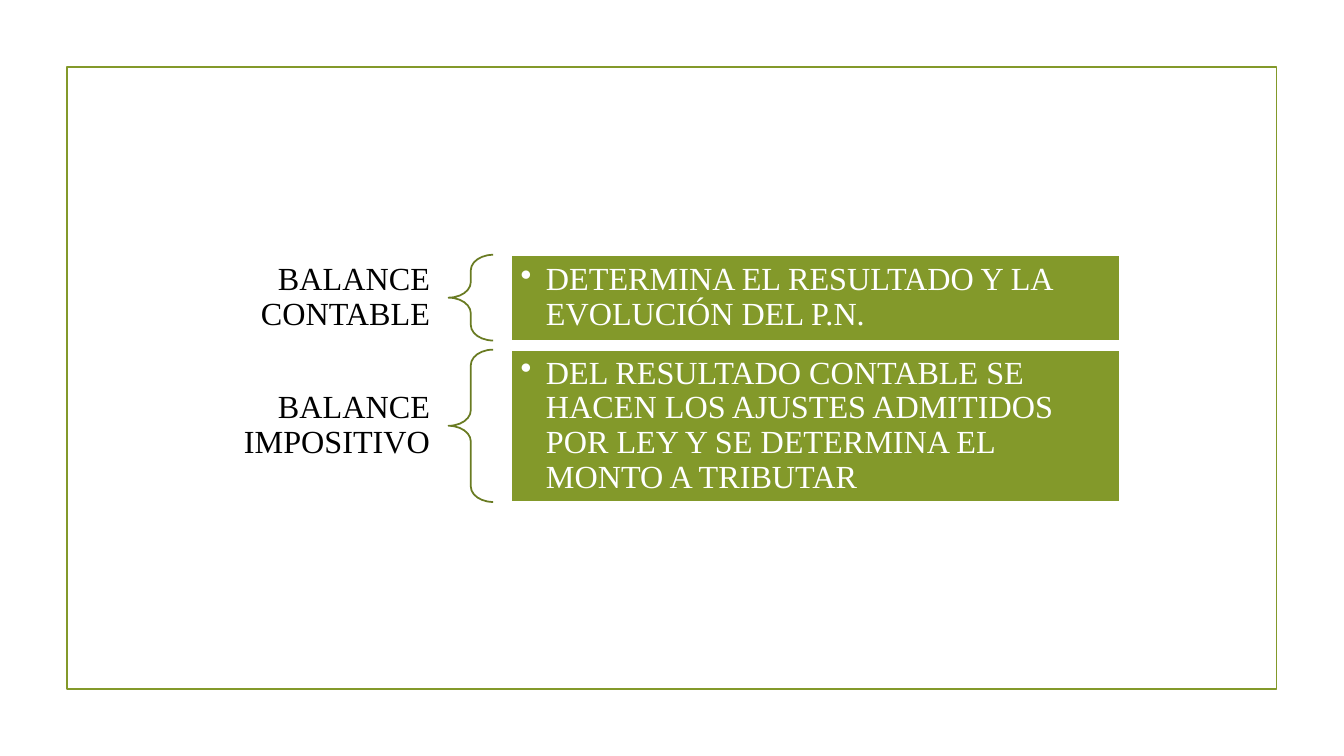
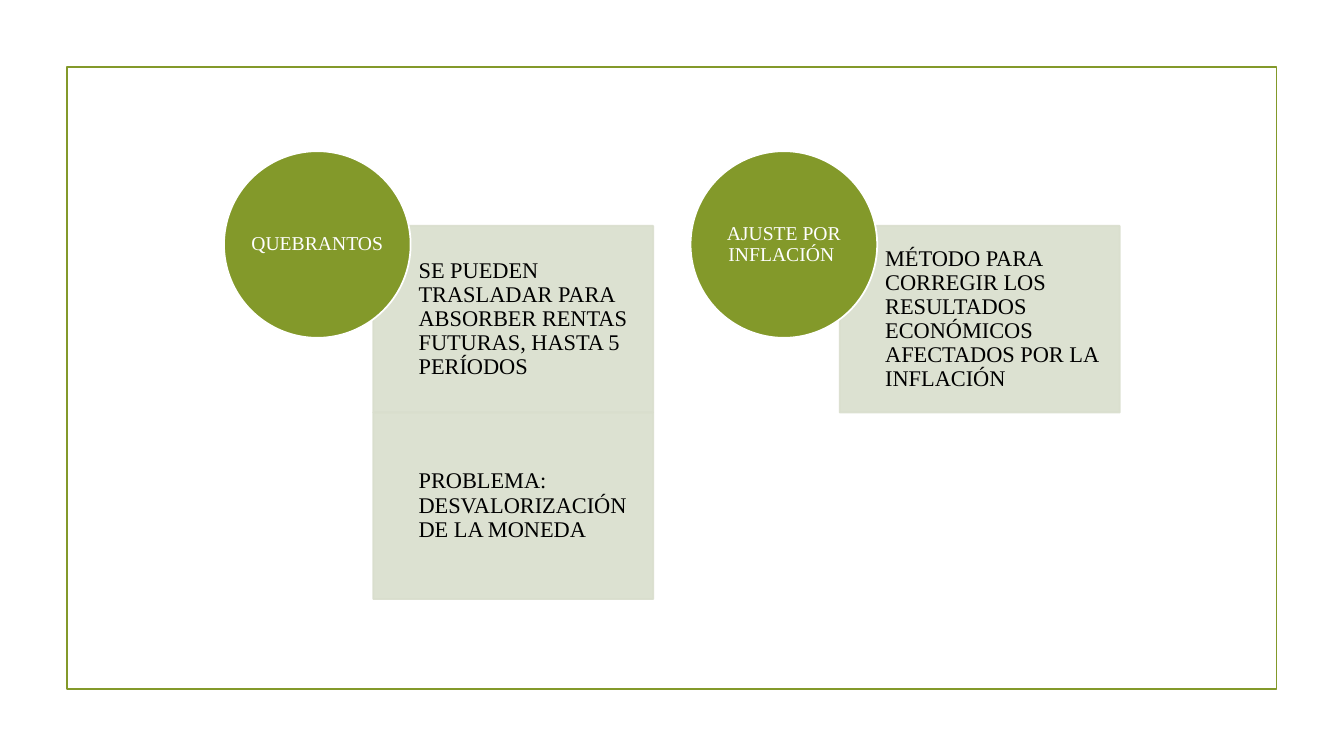
"""Build two slides on accounting and tax balances, tax losses and inflation adjustment."""
from lxml import etree
from pptx import Presentation
from pptx.dml.color import RGBColor
from pptx.enum.shapes import MSO_SHAPE
from pptx.enum.text import MSO_ANCHOR, PP_ALIGN
from pptx.oxml.ns import qn
from pptx.util import Pt

RECT, OVAL, BRACE = MSO_SHAPE.RECTANGLE, MSO_SHAPE.OVAL, MSO_SHAPE.LEFT_BRACE
LEFT, CENTER, RIGHT = PP_ALIGN.LEFT, PP_ALIGN.CENTER, PP_ALIGN.RIGHT
MIDDLE = MSO_ANCHOR.MIDDLE

COLORS = {"olive": "83992A", "dark": "697B22", "pale": "D9DECD",
          "white": "FFFFFF", "black": "000000"}
FONT = "Times New Roman"
LINE_WIDTH = 1.25

BALANCES = [
    ("BALANCE CONTABLE", "DETERMINA EL RESULTADO Y LA EVOLUCIÓN DEL P.N.", 61.2),
    ("BALANCE IMPOSITIVO",
     "DEL RESULTADO CONTABLE SE HACEN LOS AJUSTES ADMITIDOS POR LEY "
     "Y SE DETERMINA EL MONTO A TRIBUTAR", 108.8),
]
TOPICS = [
    ("QUEBRANTOS",
     ["SE PUEDEN TRASLADAR PARA ABSORBER RENTAS FUTURAS, HASTA 5 PERÍODOS",
      "PROBLEMA: DESVALORIZACIÓN DE LA MONEDA"]),
    ("AJUSTE POR INFLACIÓN ",
     ["MÉTODO PARA CORREGIR LOS RESULTADOS ECONÓMICOS AFECTADOS POR LA INFLACIÓN"]),
]

LABEL = {"size": 23, "color": "black", "align": RIGHT, "insets": (13, 4.5, 13, 4.5)}
ANSWER = {"size": 23, "color": "white", "align": LEFT, "insets": (7, 7, 7, 7), "indent": 18}
CARD = {"size": 16, "color": "black", "align": LEFT, "insets": (32.4, 9, 9, 9)}
CIRCLE = {"size": 14, "color": "white", "align": CENTER, "insets": (0, 0, 0, 0)}


def rgb(name):
    return RGBColor.from_string(COLORS[name])


def add_part(page, kind, area, fill=None, line=None, opacity=None):
    shape = page.shapes.add_shape(kind, *map(Pt, area))
    shape.shadow.inherit = False
    for paint, color in ((shape.fill, fill), (shape.line.fill, line)):
        if color is None:
            paint.background()
            continue
        paint.solid()
        paint.fore_color.rgb = rgb(color)
    if line:
        shape.line.width = Pt(LINE_WIDTH)
    if opacity:
        for tint in shape.element.spPr.iter(qn("a:srgbClr")):
            etree.SubElement(tint, qn("a:alpha"), val=str(opacity * 1000))
    return shape


def write(shape, text, style):
    frame = shape.text_frame
    values = dict(zip(("margin_left", "margin_top", "margin_right", "margin_bottom"),
                      map(Pt, style["insets"])), word_wrap=True, vertical_anchor=MIDDLE)
    for name, value in values.items():
        setattr(frame, name, value)
    para = frame.paragraphs[0]
    para.alignment = style["align"]
    para.line_spacing = 0.9
    if "indent" in style:
        props = para._p.get_or_add_pPr()
        indent = int(Pt(style["indent"]))
        props.set("marL", str(indent))
        props.set("indent", str(-indent))
        etree.SubElement(props, qn("a:buChar"), char="•")
    span = para.add_run()
    span.text = text
    span.font.name = FONT
    span.font.size = Pt(style["size"])
    span.font.color.rgb = rgb(style["color"])


def add_balances(page):
    label_left, label_width, brace_width, gap = 160.4, 160, 31.8, 12.8
    brace_left = label_left + label_width
    answer_left = brace_left + brace_width + gap
    top, row_gap = 182, 6.6
    for label, answer, height in BALANCES:
        write(add_part(page, RECT, (label_left, top, label_width, height)), label, LABEL)
        brace = add_part(page, BRACE, (brace_left, top, brace_width, height), line="dark")
        brace.adjustments[0] = 0.35
        box = add_part(page, RECT, (answer_left, top, 435, height), "olive", "white")
        write(box, answer, ANSWER)
        top += height + row_gap


def add_topics(page):
    diameter, left, top = 133.3, 160, 108
    for column, (name, notes) in enumerate(TOPICS):
        circle_left = left + column * 2.5 * diameter
        for row, note in enumerate(notes):
            area = (circle_left + 0.8 * diameter, top + (0.4 + row) * diameter,
                    1.5 * diameter, diameter)
            write(add_part(page, RECT, area, "pale", "pale", 90), note, CARD)
        circle = add_part(page, OVAL, (circle_left, top, diameter, diameter), "olive", "white")
        write(circle, name, CIRCLE)


def main():
    deck = Presentation()
    deck.slide_width, deck.slide_height = Pt(960), Pt(540)
    layout = deck.slide_layouts[6]
    pages = [deck.slides.add_slide(layout) for _ in range(2)]
    border = add_part(pages[0], RECT, (47.8, 48, 864, 444), line="olive")
    layout.shapes.element.append(border.element)
    for page, build in zip(pages, (add_balances, add_topics)):
        build(page)
    deck.save("out.pptx")


if __name__ == "__main__":
    main()
